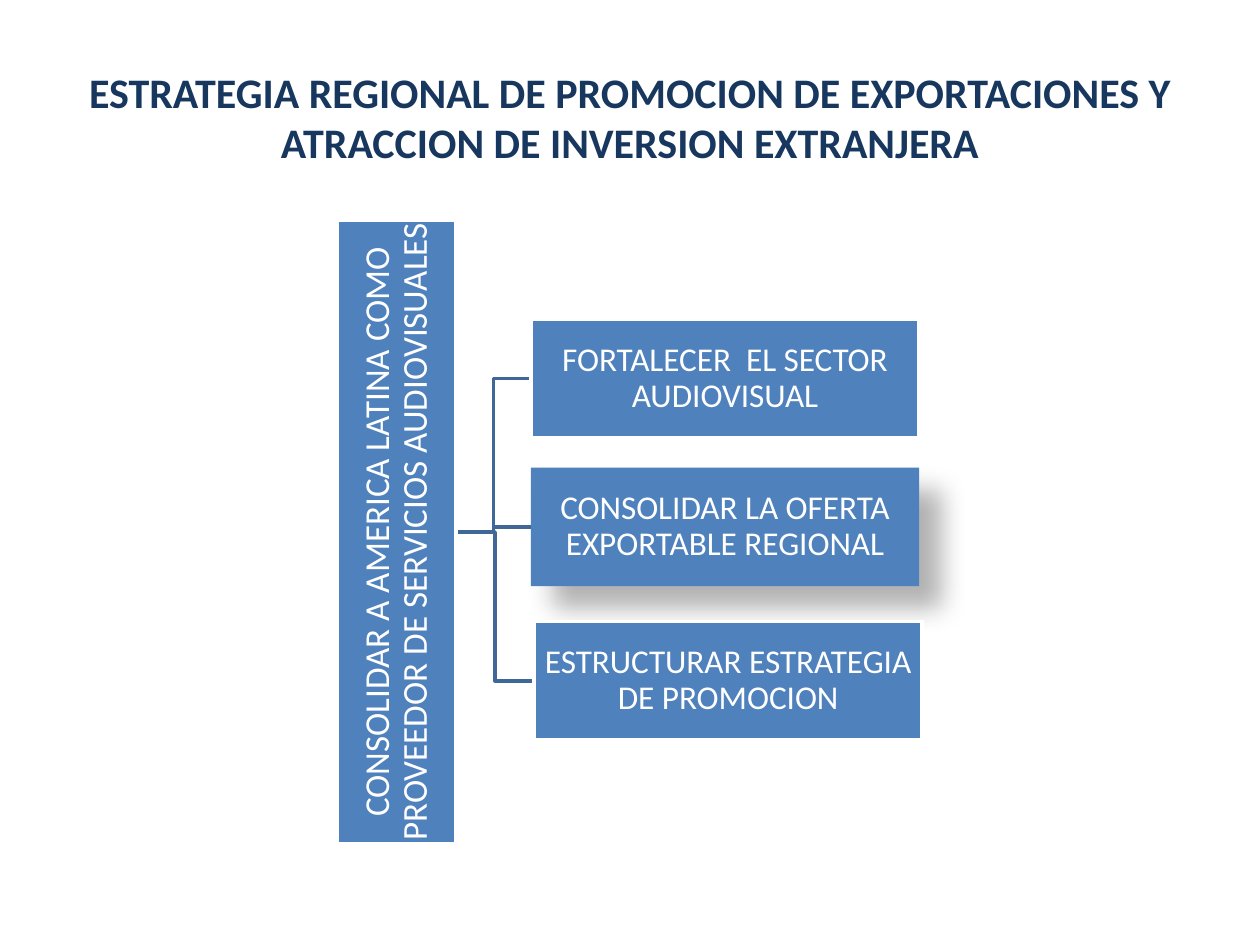
from dataclasses import dataclass

from lxml.etree import SubElement
from pptx import Presentation
from pptx.dml.color import RGBColor
from pptx.enum.shapes import MSO_SHAPE
from pptx.enum.text import MSO_ANCHOR, PP_ALIGN
from pptx.oxml.ns import qn
from pptx.util import Pt


@dataclass(frozen=True)
class Theme:
    font: str = "Calibri"
    title_color: str = "17375E"
    box_color: str = "4F81BD"
    branch_color: str = "3F6797"
    light: str = "FFFFFF"
    shadow_color: str = "000000"
    title_size: int = 24
    goal_size: int = 20
    action_size: int = 19
    line_width: int = 2


def set_attributes(target, values):
    for name, value in values.items():
        setattr(target, name, value)


class SlideBuilder:
    def __init__(self, slide, theme):
        self.slide = slide
        self.theme = theme

    def add_label(self, shape, text, size, color, inset, spacing, bold=False):
        frame = shape.text_frame
        set_attributes(frame, {
            "word_wrap": True,
            "vertical_anchor": MSO_ANCHOR.MIDDLE,
            **{f"margin_{side}": Pt(inset) for side in ("left", "top", "right", "bottom")},
        })
        paragraph = frame.paragraphs[0]
        set_attributes(paragraph, {"alignment": PP_ALIGN.CENTER, "line_spacing": spacing})
        run = paragraph.add_run()
        run.text = text
        set_attributes(run.font, {"name": self.theme.font, "size": Pt(size), "bold": bold})
        run.font.color.rgb = RGBColor.from_string(color)

    def title(self, text, left, top, width, height):
        shape = self.slide.shapes.add_textbox(Pt(left), Pt(top), Pt(width), Pt(height))
        self.add_label(shape, text, self.theme.title_size, self.theme.title_color, 5, 1, bold=True)

    def box(self, text, left, top, width, height, size, rotation=0, shadow=False):
        shape = self.slide.shapes.add_shape(
            MSO_SHAPE.RECTANGLE, Pt(left), Pt(top), Pt(width), Pt(height))
        shape.rotation = rotation
        shape.shadow.inherit = False
        shape.fill.solid()
        shape.fill.fore_color.rgb = RGBColor.from_string(self.theme.box_color)
        if shadow:
            shape.line.fill.background()
            self.cast_shadow(shape)
        else:
            shape.line.color.rgb = RGBColor.from_string(self.theme.light)
            shape.line.width = Pt(self.theme.line_width)
        self.add_label(shape, text, size, self.theme.light, 1, 0.9)

    def cast_shadow(self, shape):
        effects = shape._element.spPr.find(qn("a:effectLst"))
        outer = SubElement(effects, qn("a:outerShdw"), {
            "blurRad": str(Pt(15)), "dist": str(Pt(18)),
            "dir": str(45 * 60000), "algn": "tl", "rotWithShape": "0"})
        color = SubElement(outer, qn("a:srgbClr"), val=self.theme.shadow_color)
        SubElement(color, qn("a:alpha"), val="30000")

    def branch(self, start_x, start_y, end_x, end_y):
        middle = (start_x + end_x) / 2
        builder = self.slide.shapes.build_freeform(Pt(start_x), Pt(start_y))
        points = [(middle, start_y), (middle, end_y), (end_x, end_y)]
        builder.add_line_segments([(Pt(x), Pt(y)) for x, y in points], close=False)
        shape = builder.convert_to_shape()
        shape.shadow.inherit = False
        shape.fill.background()
        shape.line.color.rgb = RGBColor.from_string(self.theme.branch_color)
        shape.line.width = Pt(self.theme.line_width)


def main():
    presentation = Presentation()
    set_attributes(presentation, {"slide_width": Pt(720), "slide_height": Pt(540)})
    theme = Theme()
    builder = SlideBuilder(presentation.slides.add_slide(presentation.slide_layouts[6]), theme)

    # Title
    builder.title(
        "ESTRATEGIA REGIONAL DE PROMOCION DE EXPORTACIONES Y ATRACCION DE INVERSION EXTRANJERA",
        36, 21.6, 648, 90)

    # Geometry: the goal stands upright, the actions are stacked to its right
    box_height = 67.8
    action_width = 221.8
    goal_length = 356.4
    goal_x, goal_y = 226.6, 304
    actions = [
        ("CONSOLIDAR LA OFERTA EXPORTABLE REGIONAL", 303.4, 267.2, True),
        ("FORTALECER  EL SECTOR AUDIOVISUAL", 303.4, 182.4, False),
        ("ESTRUCTURAR ESTRATEGIA DE PROMOCION", 305.2, 355.2, False),
    ]

    # Branches behind the boxes
    for _, left, top, _ in actions:
        builder.branch(goal_x + box_height / 2, goal_y, left, top + box_height / 2)

    # Goal
    builder.box(
        "CONSOLIDAR A AMERICA LATINA COMO PROVEEDOR DE SERVICIOS AUDIOVISUALES",
        goal_x - goal_length / 2, goal_y - box_height / 2, goal_length, box_height,
        theme.goal_size, rotation=270)

    # Actions
    for text, left, top, shadow in actions:
        builder.box(text, left, top, action_width, box_height, theme.action_size, shadow=shadow)

    presentation.save("out.pptx")


if __name__ == "__main__":
    main()
